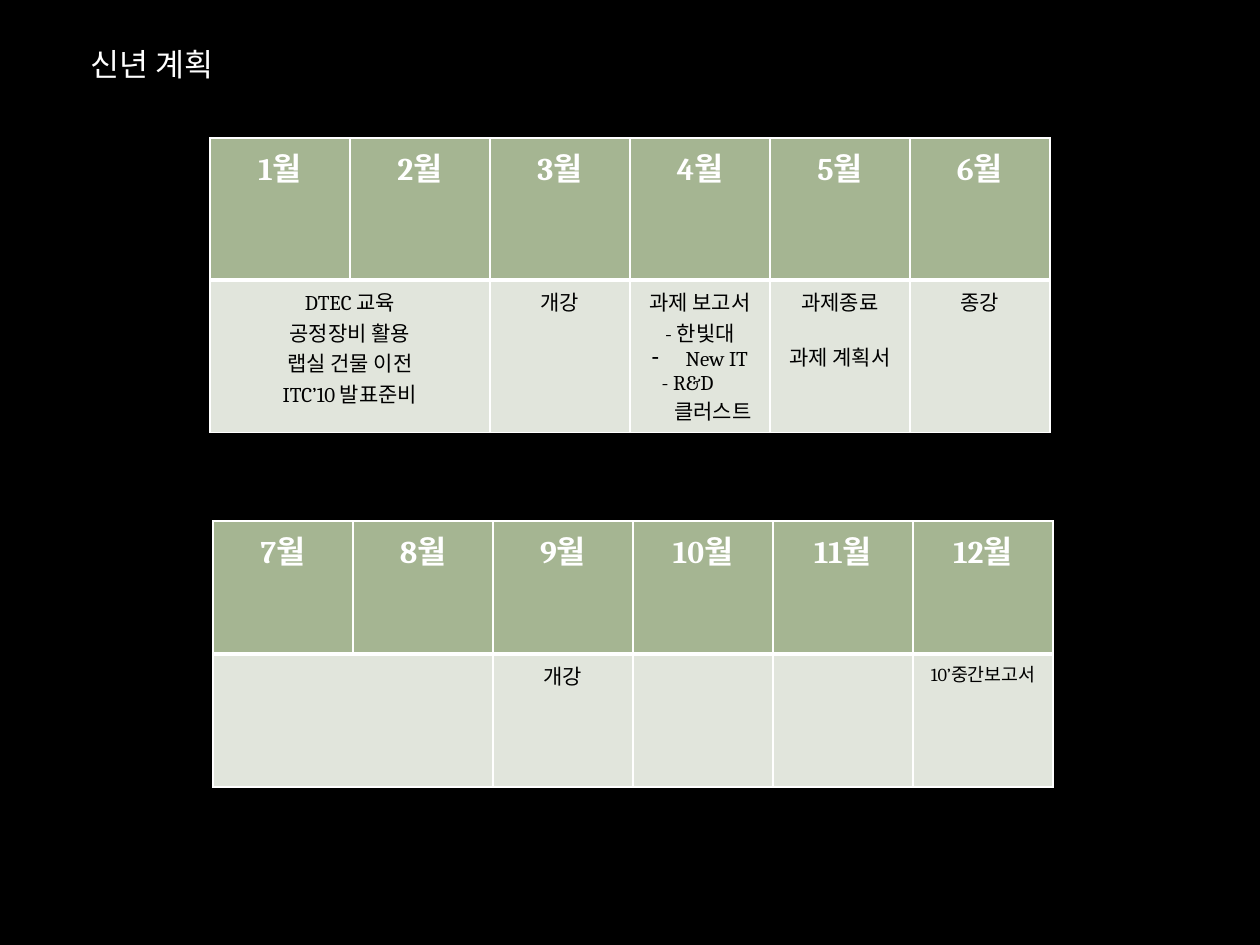
from lxml.etree import SubElement
from pptx import Presentation
from pptx.dml.color import RGBColor
from pptx.enum.text import MSO_AUTO_SIZE, PP_ALIGN
from pptx.oxml.ns import qn
from pptx.util import Pt

SCALE = 914400 // 126
FONT = "Cambria"
COLORS = {"back": "000000", "head": "A5B592", "body": "E1E5DC",
          "light": "FFFFFF", "dark": "000000"}
HEAD_FORMAT = {"size": Pt(18), "bold": True}
BODY_FORMAT = {"size": Pt(12), "bold": False}
SMALL_FORMAT = {"size": Pt(10.5), "bold": False}
MONTHS, COLUMN = 6, 140

FIRST_HALF = {
    0: ["DTEC 교육", "공정장비 활용", "랩실 건물 이전", "ITC’10 발표준비"],
    2: ["개강"],
    3: ["과제 보고서", "- 한빛대",
        (" New IT", {"margin": 29, "bullet": "-"}),
        ("- R&D", {"margin": 19, "align": PP_ALIGN.LEFT}),
        ("클러스트", {"margin": 26})],
    4: ["과제종료", ("과제 계획서", {"before": 14})],
    5: ["종강"],
}
SECOND_HALF = {
    2: ["개강"],
    5: [("10’중간보고서", {"style": SMALL_FORMAT})],
}


def px(length):
    return length * SCALE


def color(name):
    return RGBColor.from_string(COLORS[name])


def write(para, text, style, ink):
    span = para.add_run()
    span.text = text
    for name, value in {"name": FONT, **style}.items():
        setattr(span.font, name, value)
    span.font.color.rgb = color(ink)


def add_title(page, left, top, width, height, text):
    box = page.shapes.add_textbox(px(left), px(top), px(width), px(height))
    frame = box.text_frame
    frame.word_wrap = False
    frame.auto_size = MSO_AUTO_SIZE.SHAPE_TO_FIT_TEXT
    write(frame.paragraphs[0], text, {"size": Pt(18)}, "light")


def set_borders(cell, widths):
    properties = cell._tc.get_or_add_tcPr()
    for index, (side, width) in enumerate(widths.items()):
        line = properties.makeelement(qn(f"a:ln{side}"), w=str(Pt(width)))
        fill = SubElement(line, qn("a:solidFill"))
        SubElement(fill, qn("a:srgbClr"), val=COLORS["light"])
        properties.insert(index, line)


def fill_cell(cell, entries, fill, ink, style, widths):
    cell.fill.solid()
    cell.fill.fore_color.rgb = color(fill)
    set_borders(cell, widths)
    frame = cell.text_frame
    for index, entry in enumerate(entries):
        text, layout = (entry, {}) if isinstance(entry, str) else entry
        para = frame.add_paragraph() if index else frame.paragraphs[0]
        para.alignment = layout.get("align", PP_ALIGN.CENTER)
        if "before" in layout:
            para.space_before = Pt(layout["before"])
        properties = para._p.get_or_add_pPr()
        if "margin" in layout:
            properties.set("marL", str(px(layout["margin"])))
        if "bullet" in layout:
            properties.set("indent", str(-px(layout["margin"])))
            SubElement(properties, qn("a:buChar"), char=layout["bullet"])
        write(para, text, layout.get("style", style), ink)


def add_half_year(page, left, top, row_height, first_month, plans):
    table = page.shapes.add_table(2, MONTHS, px(left), px(top),
                                  px(MONTHS * COLUMN), px(2 * row_height)).table
    table.horz_banding = False
    for row in table.rows:
        row.height = px(row_height)
    for index, column in enumerate(table.columns):
        column.width = px(COLUMN)
        fill_cell(table.cell(0, index), [f"{first_month + index}월"], "head",
                  "light", HEAD_FORMAT, {"L": 1, "R": 1, "T": 1, "B": 3})
        fill_cell(table.cell(1, index), plans.get(index, []), "body",
                  "dark", BODY_FORMAT, {"L": 1, "R": 1, "T": 3, "B": 1})
    table.cell(1, 0).merge(table.cell(1, 1))


def main():
    deck = Presentation()
    deck.slide_width, deck.slide_height = px(1260), px(945)
    page = deck.slides.add_slide(deck.slide_layouts[6])
    page.background.fill.solid()
    page.background.fill.fore_color.rgb = color("back")
    add_half_year(page, 210, 138, 142, 1, FIRST_HALF)
    add_half_year(page, 213, 521, 133, 7, SECOND_HALF)
    add_title(page, 78, 39, 160, 51, "신년 계획")
    deck.save("out.pptx")


if __name__ == "__main__":
    main()
